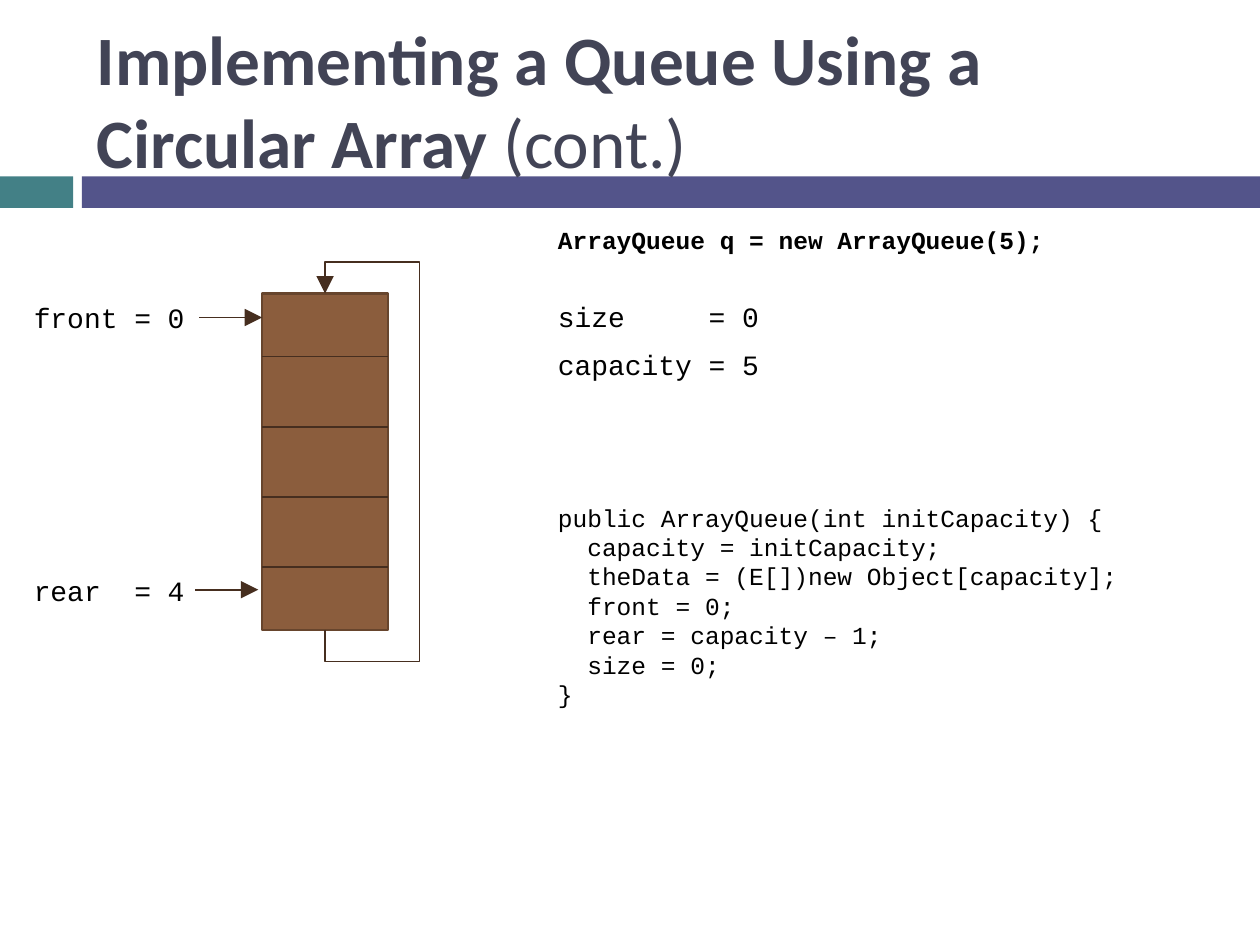
from pptx import Presentation
from pptx.dml.color import RGBColor
from pptx.enum.shapes import MSO_CONNECTOR, MSO_SHAPE
from pptx.enum.text import MSO_ANCHOR
from pptx.oxml.ns import qn
from pptx.util import Inches, Pt
from lxml import etree

STRAIGHT = MSO_CONNECTOR.STRAIGHT
RECTANGLE = MSO_SHAPE.RECTANGLE
MIDDLE = MSO_ANCHOR.MIDDLE

TITLE_FONT, CODE_FONT = "Calibri", "Courier New"
TITLE_COLOR, CODE_COLOR = "424456", "000000"
TEAL, PURPLE = "438086", "53548A"
CELL_FILL, CELL_BORDER, LINE_COLOR = "8B5D3D", "67452D", "462E1F"

ARRAY_LEFT, ARRAY_TOP, ARRAY_WIDTH, ARRAY_HEIGHT = 2.08, 2.33, 1, 2.67
FIRST_DIVIDER, LAST_DIVIDER, DIVIDER_COUNT = 2.83, 4.5, 4
LOOP_GAP = 0.25
CODE_LEFT = 4.33

CONSTRUCTOR = """public ArrayQueue(int initCapacity) {
  capacity = initCapacity;
  theData = (E[])new Object[capacity];
  front = 0;
  rear = capacity – 1;
  size = 0;
}"""


def color(hex_string):
    return RGBColor.from_string(hex_string)


def add_rectangle(slide, left, top, width, height, fill, border=None):
    shape = slide.shapes.add_shape(
        RECTANGLE, Inches(left), Inches(top), Inches(width), Inches(height))
    shape.shadow.inherit = False
    shape.fill.solid()
    shape.fill.fore_color.rgb = color(fill)
    if border:
        shape.line.color.rgb = color(border)
        shape.line.width = Pt(1.5)
    else:
        shape.line.fill.background()


def style_line(shape, arrow):
    shape.line.color.rgb = color(LINE_COLOR)
    shape.line.width = Pt(1)
    if arrow:
        outline = shape.line._get_or_add_ln()
        etree.SubElement(outline, qn("a:tailEnd"), type="triangle", w="lg", len="lg")


def add_line(slide, start, end, arrow=False):
    points = [Inches(value) for value in (*start, *end)]
    connector = slide.shapes.add_connector(STRAIGHT, *points)
    style_line(connector, arrow)
    etree.SubElement(connector._element.spPr, qn("a:effectLst"))


def add_bent_arrow(slide, points):
    start, *corners = [(Inches(x), Inches(y)) for x, y in points]
    builder = slide.shapes.build_freeform(*start)
    builder.add_line_segments(corners, close=False)
    shape = builder.convert_to_shape()
    shape.fill.background()
    style_line(shape, arrow=True)
    shape.shadow.inherit = False


def format_run(run, font, size, hex_string, bold=False):
    run.font.name = font
    run.font.size = Pt(size)
    run.font.bold = bold
    run.font.color.rgb = color(hex_string)


def add_text_box(slide, left, top, width, height, wrap=True):
    box = slide.shapes.add_textbox(
        Inches(left), Inches(top), Inches(width), Inches(height))
    box.text_frame.word_wrap = wrap
    return box.text_frame


def add_title(slide):
    text_frame = add_text_box(slide, 0.67, 0.25, 8.92, 1.08)
    text_frame.vertical_anchor = MIDDLE
    paragraph = text_frame.paragraphs[0]
    for text, bold in (("Implementing a Queue Using a Circular Array ", True),
                       ("(cont.)", False)):
        run = paragraph.add_run()
        run.text = text
        format_run(run, TITLE_FONT, 39.6, TITLE_COLOR, bold)


def add_code(slide, text, left, top, width, height, size, bold=False, wrap=True):
    text_frame = add_text_box(slide, left, top, width, height, wrap)
    text_frame.text = text
    for paragraph in text_frame.paragraphs:
        for run in paragraph.runs:
            format_run(run, CODE_FONT, size, CODE_COLOR, bold)


def add_variable(slide, text, left, top, width):
    add_code(slide, text, left, top, width, 0.37, 16, wrap=False)


def add_pointer(slide, text, top, arrow_left, arrow_y):
    """Index variable with an arrow to its array cell."""
    add_variable(slide, text, 0.17, top, 1.4)
    add_line(slide, (arrow_left, arrow_y), (arrow_left + 0.5, arrow_y), arrow=True)


def add_circular_array(slide):
    """Column of cells with an arrow looping from its bottom to its top."""
    right = ARRAY_LEFT + ARRAY_WIDTH
    bottom = ARRAY_TOP + ARRAY_HEIGHT
    add_rectangle(slide, ARRAY_LEFT, ARRAY_TOP, ARRAY_WIDTH, ARRAY_HEIGHT,
                  CELL_FILL, CELL_BORDER)
    cell_height = (LAST_DIVIDER - FIRST_DIVIDER) / (DIVIDER_COUNT - 1)
    for index in range(DIVIDER_COUNT):
        y = FIRST_DIVIDER + index * cell_height
        add_line(slide, (ARRAY_LEFT, y), (right, y))

    center = ARRAY_LEFT + ARRAY_WIDTH / 2
    loop_right = right + LOOP_GAP
    loop_top, loop_bottom = ARRAY_TOP - LOOP_GAP, bottom + LOOP_GAP
    add_bent_arrow(slide, [
        (center, bottom), (center, loop_bottom), (loop_right, loop_bottom),
        (loop_right, loop_top), (center, loop_top), (center, ARRAY_TOP)])


def main():
    presentation = Presentation()
    presentation.slide_width = Inches(10)
    presentation.slide_height = Inches(7.5)
    slide = presentation.slides.add_slide(presentation.slide_layouts[6])

    add_rectangle(slide, 0, 1.4, 0.58, 0.25, TEAL)
    add_rectangle(slide, 0.65, 1.4, 9.35, 0.25, PURPLE)
    add_title(slide)

    add_circular_array(slide)
    add_pointer(slide, "front = 0", 2.34, 1.58, 2.52)
    add_pointer(slide, "rear  = 4", 4.5, 1.55, 4.68)

    add_code(slide, "ArrayQueue q = new ArrayQueue(5);",
             CODE_LEFT, 1.74, 5, 0.34, 14, bold=True)
    add_variable(slide, "size     = 0", CODE_LEFT, 2.33, 1.82)
    add_variable(slide, "capacity = 5", CODE_LEFT, 2.71, 1.82)
    add_code(slide, CONSTRUCTOR, CODE_LEFT, 3.94, 5.33, 1.75, 14)

    presentation.save("out.pptx")


if __name__ == "__main__":
    main()
